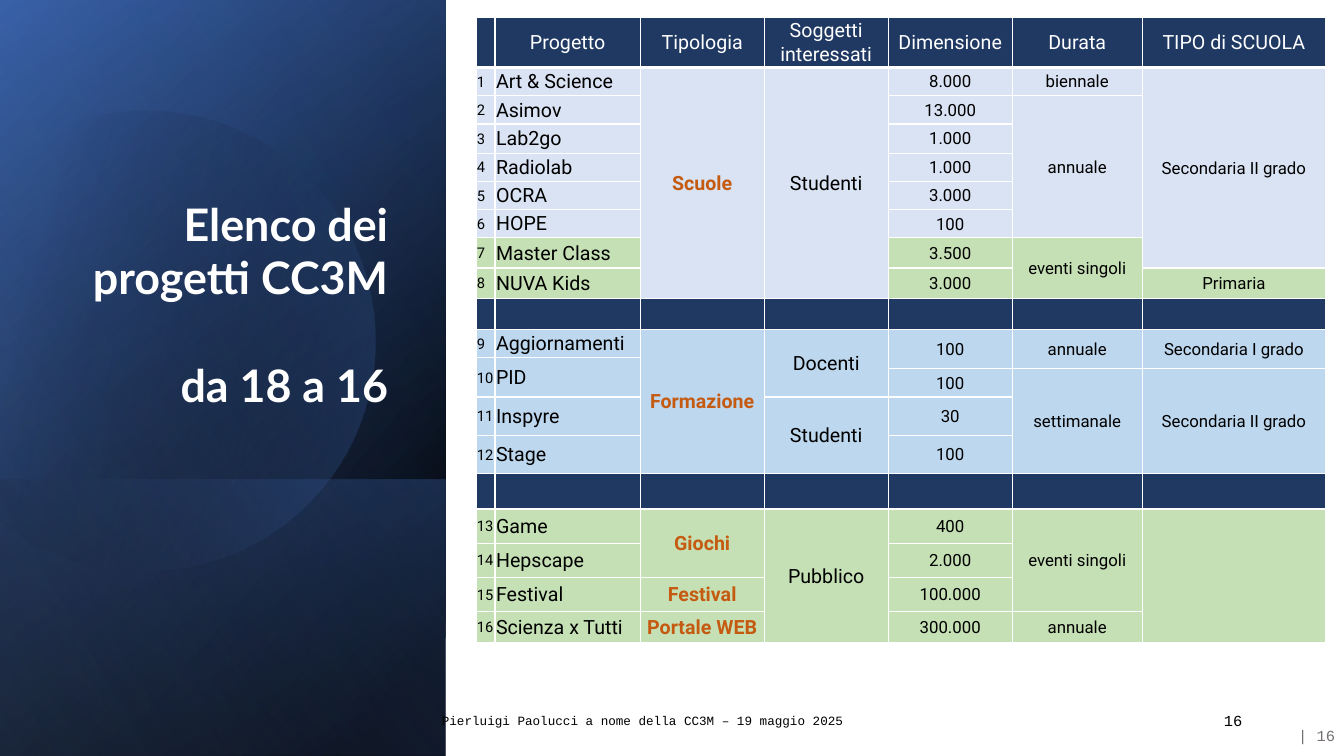
import math
from dataclasses import dataclass
from typing import NamedTuple

from lxml import etree
from pptx import Presentation, util as u
from pptx.dml.color import RGBColor
from pptx.enum import shapes, text
from pptx.oxml import ns


@dataclass(frozen=True)
class Theme:
    white: str = "FFFFFF"
    black: str = "000000"
    navy: str = "203963"
    lavender: str = "DAE3F3"
    green: str = "C5E0B4"
    sky: str = "BDD7EE"
    orange: str = "C55A11"
    grey: str = "767171"
    deep_blue: str = "2F5597"
    blue: str = "4472C4"
    light_blue: str = "8FAADC"
    title_font: str = "Lato"
    table_font: str = "Roboto"
    footer_font: str = "Courier New"
    title_size: float = 32
    large_size: float = 14
    value_size: float = 12
    number_size: float = 10.5
    page_size: float = 11
    footer_size: float = 9


THEME = Theme()


class Stop(NamedTuple):
    position: int
    color: str
    opacity: int = 100


@dataclass(frozen=True)
class Panel:
    box: tuple[float, float, float, float]
    stops: tuple[Stop, Stop]
    angle: int


@dataclass(frozen=True)
class Label:
    box: tuple[float, float, float, float]
    lines: tuple[str, ...]
    size: float
    font: str
    color: str
    align: text.PP_ALIGN = text.PP_ALIGN.RIGHT
    anchor: text.MSO_ANCHOR = text.MSO_ANCHOR.MIDDLE
    bold: bool = False


class Entry(NamedTuple):
    words: str
    rows: int = 1


FULL_PANEL = (-1.54, 1.54, 7.5, 4.42)
BACK_PANELS = (
    Panel(FULL_PANEL, (Stop(8, THEME.black), Stop(100, THEME.deep_blue)), 50),
    Panel(FULL_PANEL, (Stop(0, THEME.black, 0), Stop(99, THEME.blue, 46)), 30),
    Panel((0.84, 3.92, 2.74, 4.42), (Stop(2, THEME.blue, 29), Stop(100, THEME.black, 30)), 130),
)
FRONT_PANEL = Panel(FULL_PANEL, (Stop(0, THEME.black, 0), Stop(99, THEME.light_blue, 11)), 120)

DISC_STOPS = (Stop(29, THEME.black, 0), Stop(100, THEME.blue, 43))
DISC_TILT = 343.9
DISC_CENTER = (1.58, 3.34)
DISC_START = (1.49, 1.1)
# Each segment holds either three cubic Bézier points or one line end.
DISC_SEGMENTS = (
    ((2.46, 1.12), (3.35, 1.77), (3.63, 2.75)),
    ((3.98, 3.97), (3.28, 5.23), (2.07, 5.58)),
    ((1.31, 5.8), (0.53, 5.61), (-0.03, 5.14)),
    ((-0.15, 5.03),), ((-0.15, 1.75),), ((0, 1.61),),
    ((0.23, 1.42), (0.5, 1.28), (0.8, 1.19)),
    ((1.03, 1.13), (1.26, 1.1), (1.49, 1.1)),
)

LABELS = (
    Label((0.45, 1.51, 3.5, 2.62), ("Elenco dei progetti CC3M", "da 18 a 16"), THEME.title_size,
          THEME.title_font, THEME.white, anchor=text.MSO_ANCHOR.BOTTOM, bold=True),
    Label((12.19, 7.1, 1.15, 0.4), ("| 16",), THEME.page_size, THEME.footer_font, THEME.grey),
    Label((1.86, 6.95, 9.02, 0.4), ("Pierluigi Paolucci a nome della CC3M – 19 maggio 2025",),
          THEME.footer_size, THEME.footer_font, THEME.black, text.PP_ALIGN.CENTER),
    Label((11.27, 6.95, 1.15, 0.4), ("16",), THEME.page_size, THEME.footer_font, THEME.black),
)

GAP = Entry("")
PROJECTS = ("Art & Science", "Asimov", "Lab2go", "Radiolab", "OCRA", "HOPE", "Master Class",
            "NUVA Kids", "", "Aggiornamenti", "PID", "Inspyre", "Stage", "",
            "Game", "Hepscape", "Festival", "Scienza x Tutti")
PROJECT_NUMBERS = (*map(str, range(1, 9)), "", *map(str, range(9, 13)), "", *map(str, range(13, 17)))
PROJECT_ROWS = [2 if project == "PID" else 1 for project in PROJECTS]
AUDIENCE_SIZES = ("8.000", "13.000", "1.000", "1.000", "3.000", "100", "3.500", "3.000", "",
                  "100", "100", "30", "100", "", "400", "2.000", "100.000", "300.000")
AUDIENCE_ROWS = [2 if index == 9 else 1 for index in range(len(AUDIENCE_SIZES))]

COLUMNS = (
    [GAP, *map(Entry, PROJECT_NUMBERS, PROJECT_ROWS)],
    [Entry("Progetto"), *map(Entry, PROJECTS, PROJECT_ROWS)],
    [Entry("Tipologia"), Entry("Scuole", 8), GAP, Entry("Formazione", 5), GAP,
     Entry("Giochi", 2), Entry("Festival"), Entry("Portale WEB")],
    [Entry("Soggetti interessati"), Entry("Studenti", 8), GAP, Entry("Docenti", 3),
     Entry("Studenti", 2), GAP, Entry("Pubblico", 4)],
    [Entry("Dimensione"), *map(Entry, AUDIENCE_SIZES, AUDIENCE_ROWS)],
    [Entry("Durata"), Entry("biennale"), Entry("annuale", 5), Entry("eventi singoli", 2), GAP,
     Entry("annuale", 2), Entry("settimanale", 3), GAP, Entry("eventi singoli", 3), Entry("annuale")],
    [Entry("TIPO di SCUOLA"), Entry("Secondaria II grado", 7), Entry("Primaria"), GAP,
     Entry("Secondaria I grado", 2), Entry("Secondaria II grado", 3), GAP, Entry("", 4)],
)
COLUMN_WIDTHS = (0.19, 1.44, 1.23, 1.23, 1.23, 1.29, 1.82)
COLUMN_SIZES = (THEME.number_size, *[THEME.large_size] * 3, *[THEME.value_size] * 3)
TYPE_COLUMN = 2
ROW_HEIGHTS = (0.5, 0.28, 0.28, 0.29, 0.28, 0.28, 0.28, 0.3, 0.3, 0.29,
               0.28, 0.11, 0.28, 0.38, 0.38, 0.35, 0.34, 0.34, 0.34, 0.31)
ROW_FILLS = (THEME.navy, *[THEME.lavender] * 6, *[THEME.green] * 2, THEME.navy,
             *[THEME.sky] * 5, THEME.navy, *[THEME.green] * 4)


def add_solid(parent, color: str, opacity: int = 100) -> None:
    rgb = etree.SubElement(parent, ns.qn("a:srgbClr"), val=color)
    if opacity < 100:
        etree.SubElement(rgb, ns.qn("a:alpha"), val=str(opacity * 1000))


def paint_gradient(shape, stops: tuple[Stop, ...], angle: int) -> None:
    """Fill with a linear gradient that turns with the shape, without outline or shadow."""
    shape.shadow.inherit = False
    shape.line.fill.background()
    shape.fill.gradient()
    gradient = shape.element.spPr.find(ns.qn("a:gradFill"))
    for child in list(gradient):
        gradient.remove(child)
    gradient.set("rotWithShape", "1")
    stop_list = etree.SubElement(gradient, ns.qn("a:gsLst"))
    for stop in stops:
        mark = etree.SubElement(stop_list, ns.qn("a:gs"), pos=str(stop.position * 1000))
        add_solid(mark, stop.color, stop.opacity)
    etree.SubElement(gradient, ns.qn("a:lin"), ang=str(angle * 60000), scaled="0")


def draw_panel(slide, panel: Panel) -> None:
    shape = slide.shapes.add_shape(shapes.MSO_SHAPE.RECTANGLE, *map(u.Inches, panel.box))
    shape.rotation = 90
    shape.element.spPr.get_or_add_xfrm().set("flipH", "1")
    paint_gradient(shape, panel.stops, panel.angle)


def untilt(point: tuple[float, float]) -> tuple[float, float]:
    """Turn a point back about the disc centre, so that the shape rotation restores it."""
    turn = math.radians(-DISC_TILT)
    dx, dy = point[0] - DISC_CENTER[0], point[1] - DISC_CENTER[1]
    return (u.Inches(DISC_CENTER[0] + dx * math.cos(turn) - dy * math.sin(turn)),
            u.Inches(DISC_CENTER[1] + dx * math.sin(turn) + dy * math.cos(turn)))


def draw_disc(slide, steps: int = 24) -> None:
    outline = [DISC_START]
    for segment in DISC_SEGMENTS:
        if len(segment) == 1:
            outline.append(segment[0])
            continue
        controls = (outline[-1], *segment)
        for t in (step / steps for step in range(1, steps + 1)):
            weights = [math.comb(3, k) * t**k * (1 - t)**(3 - k) for k in range(4)]
            outline.append(tuple(sum(w * p[axis] for w, p in zip(weights, controls)) for axis in (0, 1)))
    start, *rest = map(untilt, outline)
    builder = slide.shapes.build_freeform(*start)
    builder.add_line_segments(rest, close=True)
    disc = builder.convert_to_shape()
    disc.rotation = DISC_TILT
    paint_gradient(disc, DISC_STOPS, 30)


def style_font(font, name: str, size: float, color: str, bold: bool) -> None:
    font.name, font.size, font.bold = name, u.Pt(size), bold
    font.color.rgb = RGBColor.from_string(color)


def draw_label(slide, label: Label) -> None:
    frame = slide.shapes.add_textbox(*map(u.Inches, label.box)).text_frame
    frame.word_wrap = True
    frame.vertical_anchor = label.anchor
    frame.text = "\n".join(label.lines)
    for index, paragraph in enumerate(frame.paragraphs):
        paragraph.alignment = label.align
        if index:
            paragraph.space_before = u.Pt(label.size * 1.2)
        style_font(paragraph.runs[0].font, label.font, label.size, label.color, label.bold)


def style_cell(cell, fill: str, is_header: bool) -> None:
    cell.margin_left = cell.margin_right = cell.margin_top = u.Inches(0.01)
    cell.margin_bottom = 0
    cell.vertical_anchor = text.MSO_ANCHOR.MIDDLE
    cell.fill.solid()
    cell.fill.fore_color.rgb = RGBColor.from_string(fill)
    properties = cell._tc.get_or_add_tcPr()
    for index, side in enumerate("LRTB"):
        width = u.Pt(3 if is_header and side == "B" else 1)
        border = etree.Element(ns.qn(f"a:ln{side}"), w=str(width))
        add_solid(etree.SubElement(border, ns.qn("a:solidFill")), THEME.white)
        properties.insert(index, border)
    cell.text_frame.paragraphs[0].line_spacing = u.Pt(6)  # keeps empty rows low


def write_entry(cell, words: str, column: int, is_header: bool) -> None:
    cell.text_frame.text = words
    paragraph = cell.text_frame.paragraphs[0]
    paragraph.line_spacing = 1.0
    centred = is_header or column > 1
    paragraph.alignment = text.PP_ALIGN.CENTER if centred else text.PP_ALIGN.LEFT
    is_type = column == TYPE_COLUMN and not is_header
    color = THEME.white if is_header else THEME.orange if is_type else THEME.black
    size = THEME.large_size if is_header else COLUMN_SIZES[column]
    style_font(paragraph.runs[0].font, THEME.table_font, size, color, is_type)


def draw_projects(slide) -> None:
    box = (4.72, 0.17, sum(COLUMN_WIDTHS), sum(ROW_HEIGHTS))
    table = slide.shapes.add_table(len(ROW_HEIGHTS), len(COLUMNS), *map(u.Inches, box)).table
    table.first_row = table.horz_banding = False
    for row, height in zip(table.rows, ROW_HEIGHTS):
        row.height = u.Inches(height)
    for column, entries in enumerate(COLUMNS):
        table.columns[column].width = u.Inches(COLUMN_WIDTHS[column])
        top = 0
        for entry in entries:
            for row in range(top, top + entry.rows):
                style_cell(table.cell(row, column), ROW_FILLS[top], row == 0)
            first = table.cell(top, column)
            if entry.rows > 1:
                first.merge(table.cell(top + entry.rows - 1, column))
            if entry.words:
                write_entry(first, entry.words, column, top == 0)
            top += entry.rows


def main() -> None:
    deck = Presentation()
    deck.slide_width, deck.slide_height = u.Inches(13.33), u.Inches(7.5)
    slide = deck.slides.add_slide(deck.slide_layouts[6])
    for panel in BACK_PANELS:
        draw_panel(slide, panel)
    draw_disc(slide)
    draw_panel(slide, FRONT_PANEL)
    for label in LABELS:
        draw_label(slide, label)
    draw_projects(slide)
    deck.save("out.pptx")


if __name__ == "__main__":
    main()
